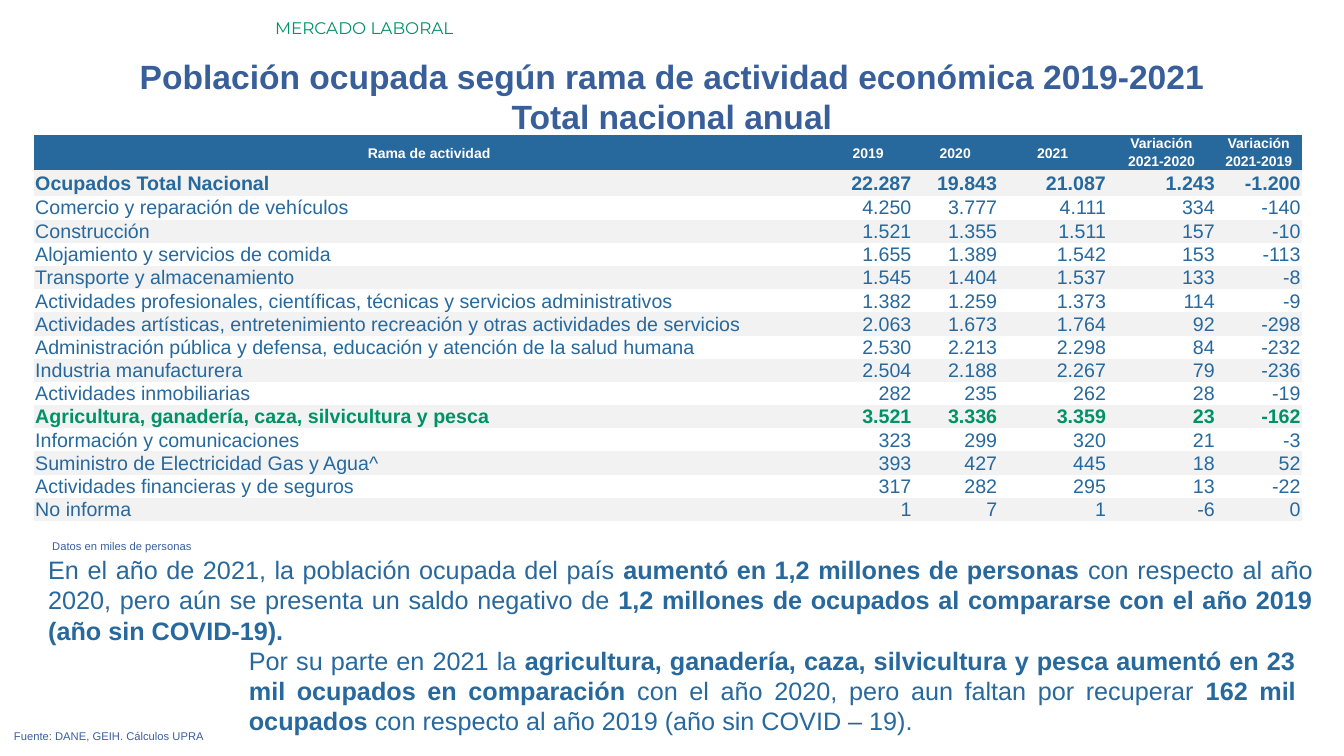
from pptx import Presentation
from pptx.dml.color import RGBColor
from pptx.enum.text import MSO_ANCHOR, MSO_AUTO_SIZE, PP_ALIGN
from pptx.util import Inches, Pt

SLIDE_WIDTH, SLIDE_HEIGHT = Inches(13.33), Inches(7.5)
BLUE, TITLE_BLUE = "27689D", "395F9B"
HEADING_GREEN, ROW_GREEN = "009267", "009167"
WHITE, BAND_GREY = "FFFFFF", "F2F2F2"
NO_STYLE_NO_GRID = "{2D5ABB26-0587-4C30-8999-92F81FD0307C}"

YEARS = ["2019", "2020", "2021"]
COMPARISONS = ["2021-2020", "2021-2019"]
COLUMN_SHARES = [58.74, 6.6, 6.38, 8.1, 8.1, 6.38]
BRANCHES = [
    ("Ocupados Total Nacional", "22.287", "19.843", "21.087", "1.243", "-1.200"),
    ("Comercio y reparación de vehículos", "4.250", "3.777", "4.111", "334", "-140"),
    ("Construcción", "1.521", "1.355", "1.511", "157", "-10"),
    ("Alojamiento y servicios de comida", "1.655", "1.389", "1.542", "153", "-113"),
    ("Transporte y almacenamiento", "1.545", "1.404", "1.537", "133", "-8"),
    ("Actividades profesionales, científicas, técnicas y servicios administrativos",
     "1.382", "1.259", "1.373", "114", "-9"),
    ("Actividades artísticas, entretenimiento recreación y otras actividades de servicios",
     "2.063", "1.673", "1.764", "92", "-298"),
    ("Administración pública y defensa, educación y atención de la salud humana",
     "2.530", "2.213", "2.298", "84", "-232"),
    ("Industria manufacturera", "2.504", "2.188", "2.267", "79", "-236"),
    ("Actividades inmobiliarias", "282", "235", "262", "28", "-19"),
    ("Agricultura, ganadería, caza, silvicultura y pesca",
     "3.521", "3.336", "3.359", "23", "-162"),
    ("Información y comunicaciones", "323", "299", "320", "21", "-3"),
    ("Suministro de Electricidad Gas y Agua^", "393", "427", "445", "18", "52"),
    ("Actividades financieras y de seguros", "317", "282", "295", "13", "-22"),
    ("No informa", "1", "7", "1", "-6", "0"),
]
ROW_SHARES = [2.27, 2.4, 3.33, 3.2] + [3.07] * (len(BRANCHES) - 2)
TOTAL_ROW, FARMING_ROW = 0, 10


def across(percent):
    return round(SLIDE_WIDTH * percent / 100)


def down(percent):
    return round(SLIDE_HEIGHT * percent / 100)


def place(box):
    """Turn left, top, width and height in percent of the slide into lengths."""
    left, top, width, height = box
    return across(left), down(top), across(width), down(height)


def format_run(run, size, color, bold=False, font="Arial"):
    run.font.name = font
    run.font.size = Pt(size)
    run.font.bold = bold
    run.font.color.rgb = RGBColor.from_string(color)


def add_text(slide, box, paragraphs, size, color, align, font="Arial"):
    """Each paragraph is a list of (text, bold) pieces."""
    shape = slide.shapes.add_textbox(*place(box))
    text_frame = shape.text_frame
    text_frame.word_wrap = True
    text_frame.auto_size = MSO_AUTO_SIZE.SHAPE_TO_FIT_TEXT
    for index, pieces in enumerate(paragraphs):
        paragraph = text_frame.add_paragraph() if index else text_frame.paragraphs[0]
        paragraph.alignment = align
        for text, bold in pieces:
            run = paragraph.add_run()
            run.text = text
            format_run(run, size, color, bold, font)


def fill_cell(cell, text, size, color, bold, align, fill):
    cell.margin_left = cell.margin_right = cell.margin_top = Inches(0.01)
    cell.margin_bottom = 0
    cell.vertical_anchor = MSO_ANCHOR.MIDDLE
    if fill:
        cell.fill.solid()
        cell.fill.fore_color.rgb = RGBColor.from_string(fill)
    else:
        cell.fill.background()
    cell.text_frame.text = text
    paragraph = cell.text_frame.paragraphs[0]
    paragraph.alignment = align
    for run in paragraph.runs:
        format_run(run, size, color, bold)


def add_header(table):
    top_row = ["Rama de actividad", *YEARS] + ["Variación"] * len(COMPARISONS)
    bottom_row = [""] * (1 + len(YEARS)) + COMPARISONS
    for row, texts in enumerate((top_row, bottom_row)):
        for column, text in enumerate(texts):
            fill_cell(table.cell(row, column), text, 10, WHITE, True, PP_ALIGN.CENTER, BLUE)
    for column in range(1 + len(YEARS)):
        table.cell(0, column).merge(table.cell(1, column))


def add_branch_table(slide, left, top):
    box = (left, top, sum(COLUMN_SHARES), sum(ROW_SHARES))
    frame = slide.shapes.add_table(len(ROW_SHARES), len(COLUMN_SHARES), *place(box))
    table = frame.table
    table.horz_banding = table.first_row = False
    table._tbl.tblPr[0].text = NO_STYLE_NO_GRID
    for column, share in zip(table.columns, COLUMN_SHARES):
        column.width = across(share)
    for row, share in zip(table.rows, ROW_SHARES):
        row.height = down(share)
    add_header(table)
    for index, branch in enumerate(BRANCHES):
        color = ROW_GREEN if index == FARMING_ROW else BLUE
        bold = index in (TOTAL_ROW, FARMING_ROW)
        fill = None if index % 2 else BAND_GREY
        for column, text in enumerate(branch):
            align = PP_ALIGN.RIGHT if column else PP_ALIGN.LEFT
            fill_cell(table.cell(index + 2, column), text, 14, color, bold, align, fill)


def add_headings(slide):
    add_text(slide, (19.73, 1.73, 80.27, 4), [[("MERCADO LABORAL", False)]],
             12, HEADING_GREEN, PP_ALIGN.LEFT, "Montserrat")
    title = [
        [("Población ocupada según rama de actividad económica 2019-2021", True)],
        [("Total nacional anual", True)],
    ]
    add_text(slide, (0, 6.67, 100, 12.13), title, 24, TITLE_BLUE, PP_ALIGN.CENTER)


def add_findings(slide):
    national = [
        ("En el año de 2021, la población ocupada del país ", False),
        ("aumentó en 1,2 millones de personas ", True),
        ("con respecto al año 2020, pero aún se presenta un saldo negativo de", False),
        (" 1,2 millones de ocupados al compararse con el año 2019 (año sin COVID-19).", True),
    ]
    farming = [
        ("Por su parte en 2021 la", False),
        (" agricultura, ganadería, caza, silvicultura y pesca aumentó en 23 mil ocupados"
         " en comparación ", True),
        ("con el año 2020, pero aun faltan por recuperar ", False),
        ("162 mil ocupados ", True),
        ("con respecto al año 2019 (año sin COVID – 19).", False),
    ]
    for box, pieces in (((2.85, 72.67, 95.57, 13.47), national),
                        ((17.78, 84.67, 79.37, 13.47), farming)):
        add_text(slide, box, [pieces], 18, BLUE, PP_ALIGN.JUSTIFY)


def add_notes_on_data(slide):
    for left, top, text in ((0.3, 95.87, "Fuente: DANE, GEIH. Cálculos UPRA"),
                            (3.15, 70.67, "Datos en miles de personas")):
        add_text(slide, (left, top, 96.85, 3.2), [[(text, False)]],
                 8, TITLE_BLUE, PP_ALIGN.JUSTIFY)


def main():
    presentation = Presentation()
    presentation.slide_width, presentation.slide_height = SLIDE_WIDTH, SLIDE_HEIGHT
    slide = presentation.slides.add_slide(presentation.slide_layouts[6])
    add_branch_table(slide, 2.55, 17.87)
    add_headings(slide)
    add_findings(slide)
    add_notes_on_data(slide)
    presentation.save("out.pptx")


if __name__ == "__main__":
    main()
